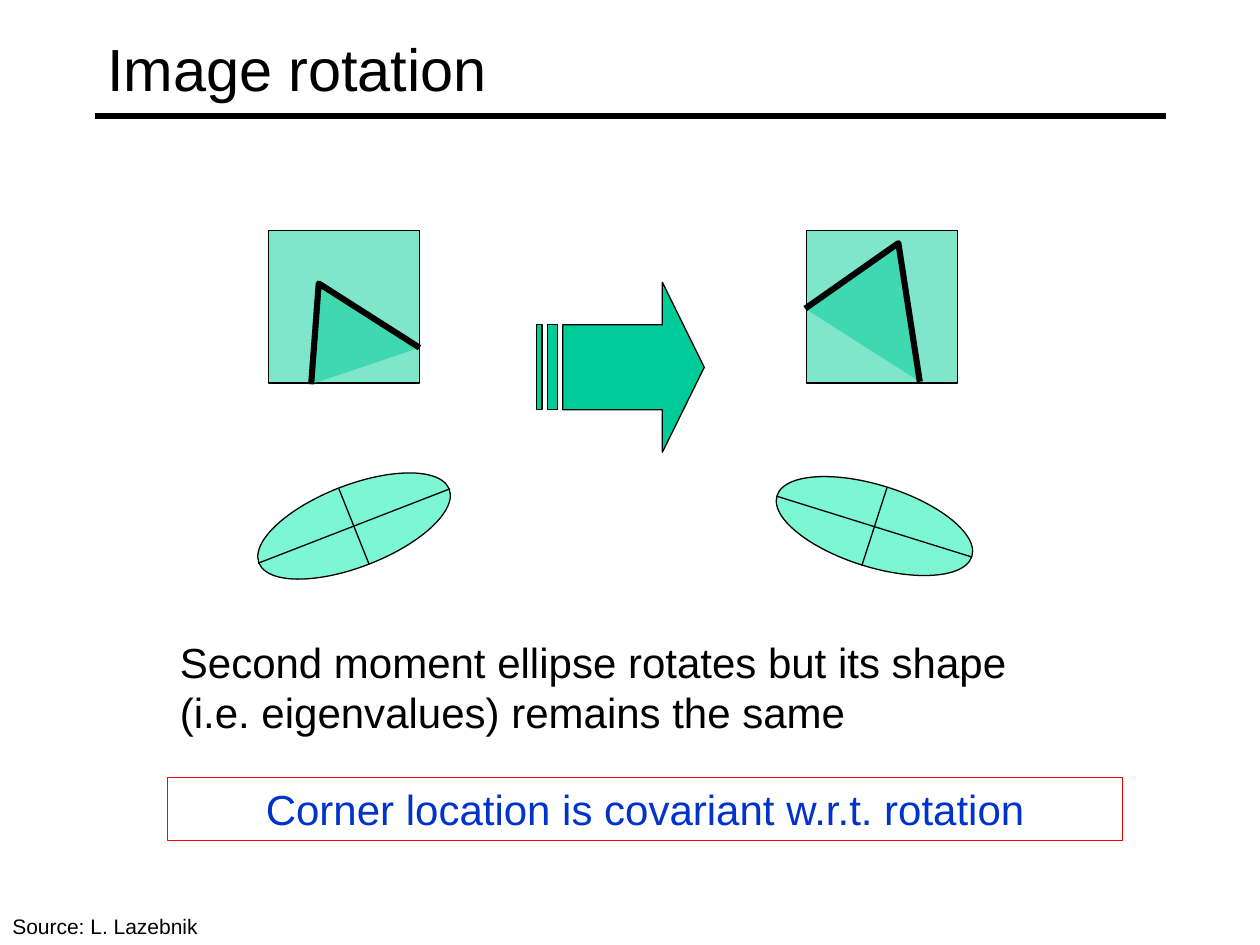
from dataclasses import dataclass, field

from lxml.etree import SubElement
from pptx import Presentation
from pptx.dml.color import RGBColor
from pptx.enum.shapes import MSO_CONNECTOR, MSO_SHAPE
from pptx.enum.text import MSO_ANCHOR, PP_ALIGN
from pptx.oxml.ns import qn
from pptx.slide import Slide
from pptx.util import Inches, Pt

COLORS = {
    "ink": "000000",
    "green": "00CC99",
    "mint": "7CF6D3",
    "red": "FF0000",
    "blue": "0033CC",
}


@dataclass
class SlideBuilder:
    page: Slide
    font: str = "Arial"
    thin: float = 0.75
    colors: dict = field(default_factory=lambda: COLORS)

    def color(self, name):
        return RGBColor.from_string(self.colors[name])

    def label(self, shape, text, size, color="ink", align=PP_ALIGN.LEFT, anchor=MSO_ANCHOR.TOP):
        frame = shape.text_frame
        frame.word_wrap = True
        frame.vertical_anchor = anchor
        para = frame.paragraphs[0]
        para.alignment = align
        span = para.add_run()
        span.text = text
        for name, value in {"name": self.font, "size": Pt(size), "bold": False}.items():
            setattr(span.font, name, value)
        span.font.color.rgb = self.color(color)

    def title(self, text, bounds, size):
        shape = self.page.shapes.title
        for name, value in zip(("left", "top", "width", "height"), bounds):
            setattr(shape, name, Inches(value))
        self.label(shape, text, size, anchor=MSO_ANCHOR.MIDDLE)

    def text(self, text, bounds, size):
        box = self.page.shapes.add_textbox(*map(Inches, bounds))
        self.label(box, text, size)

    def paint(self, shape, fill, line, width, alpha=None):
        shape.shadow.inherit = False
        if fill:
            shape.fill.solid()
            shape.fill.fore_color.rgb = self.color(fill)
        else:
            shape.fill.background()
        if alpha:
            tint = shape._element.spPr.find(qn("a:solidFill"))[0]
            SubElement(tint, qn("a:alpha"), val=str(alpha * 1000))
        shape.line.color.rgb = self.color(line)
        shape.line.width = Pt(width)

    def shape(self, kind, bounds, fill=None, line="ink", alpha=None, rotation=0):
        shape = self.page.shapes.add_shape(kind, *map(Inches, bounds))
        self.paint(shape, fill, line, self.thin, alpha)
        shape.rotation = rotation
        return shape

    def corner(self, points, width):
        start, *others = [tuple(map(Inches, point)) for point in points]
        builder = self.page.shapes.build_freeform(*start)
        builder.add_line_segments(others, close=False)
        shape = builder.convert_to_shape()
        self.paint(shape, "green", "ink", width, alpha=50)
        SubElement(shape._element.spPr.find(qn("a:ln")), qn("a:round"))

    def line(self, start, end, width=None):
        connector = self.page.shapes.add_connector(
            MSO_CONNECTOR.STRAIGHT, *map(Inches, (*start, *end)))
        connector.line.color.rgb = self.color("ink")
        connector.line.width = Pt(width or self.thin)
        SubElement(connector._element.spPr, qn("a:effectLst"))


def main():
    deck = Presentation()
    deck.slide_width, deck.slide_height = Inches(10), Inches(7.5)
    builder = SlideBuilder(deck.slides.add_slide(deck.slide_layouts[5]))

    builder.line((0.75, 0.92), (9.25, 0.92), 3)
    builder.title("Image rotation", (0.75, 0.08, 8.5, 0.92), 34)
    builder.text("Second moment ellipse rotates but its shape (i.e. eigenvalues) remains the same",
                 (1.33, 5, 7.33, 0.91), 24)

    patches = [
        (2.13, [(2.47, 3.05), (2.53, 2.25), (3.33, 2.76)]),
        (6.4, [(6.39, 2.45), (7.13, 1.93), (7.3, 3.03)]),
    ]
    for left, points in patches:
        builder.shape(MSO_SHAPE.RECTANGLE, (left, 1.83, 1.2, 1.21), "green", alpha=50)
        builder.corner(points, 3.5)

    arrow = builder.shape(MSO_SHAPE.STRIPED_RIGHT_ARROW, (4.26, 2.24, 1.33, 1.35), "green")
    arrow.adjustments[0], arrow.adjustments[1] = 0.5, 0.25

    ellipses = [
        (2, 338.8, [((2.05, 4.47), (3.57, 3.88)), ((2.69, 3.88), (2.93, 4.48))]),
        (6.13, 17.3, [((6.17, 3.94), (7.71, 4.42)), ((7.04, 3.87), (6.84, 4.49))]),
    ]
    for left, rotation, axes in ellipses:
        builder.shape(MSO_SHAPE.OVAL, (left, 3.85, 1.62, 0.65), "mint", rotation=rotation)
        for start, end in axes:
            builder.line(start, end)

    conclusion = builder.shape(MSO_SHAPE.RECTANGLE, (1.33, 6.17, 7.58, 0.5), line="red")
    builder.label(conclusion, "Corner location is covariant w.r.t. rotation", 24, "blue",
                  PP_ALIGN.CENTER)
    builder.text("Source: L. Lazebnik", (0, 7.2, 1.93, 0.3), 12)

    deck.save("out.pptx")


if __name__ == "__main__":
    main()
